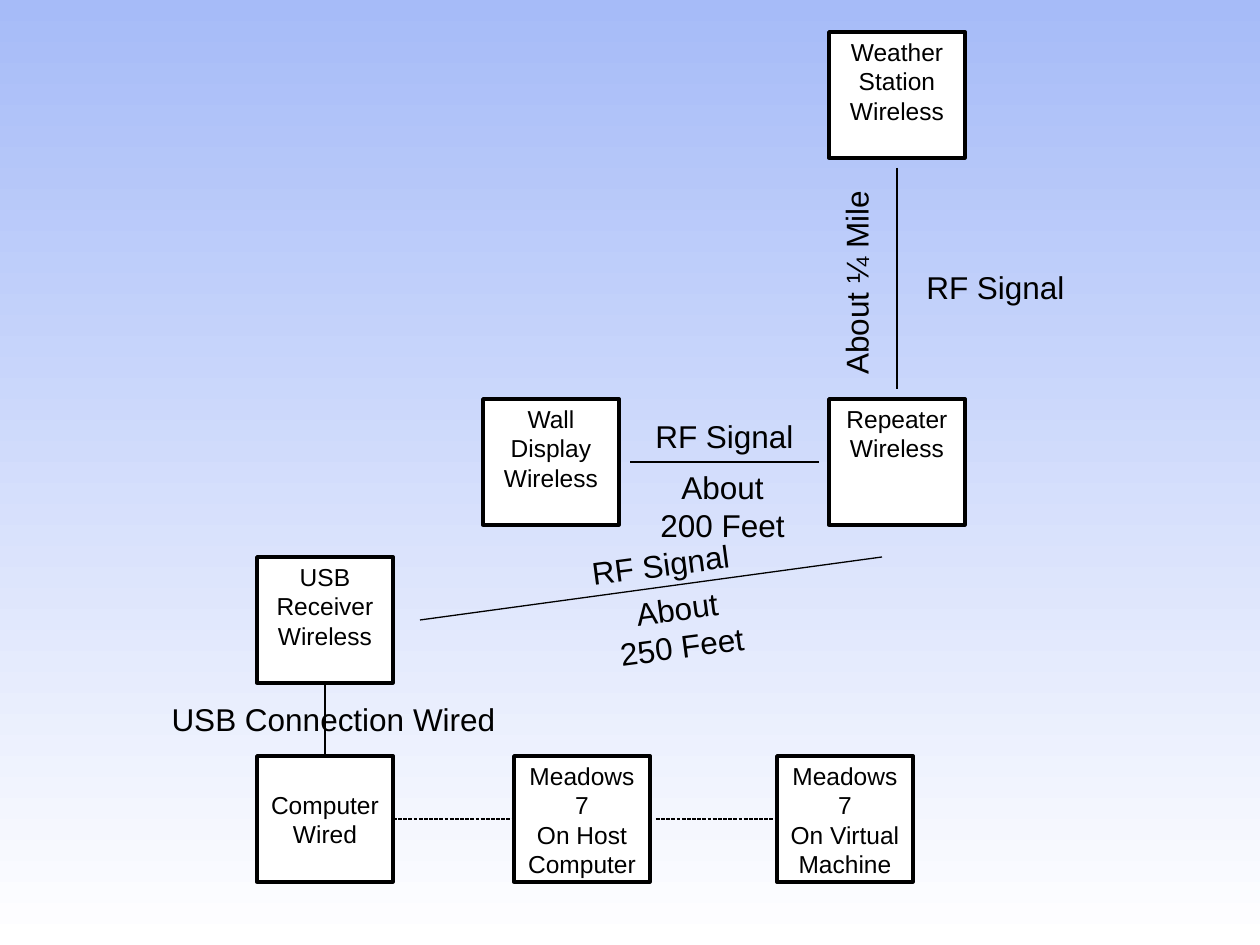
import pptx
import pptx.dml.color
import pptx.enum.dml
import pptx.enum.shapes
import pptx.enum.text
import pptx.util
from dataclasses import dataclass
from lxml import etree

PX = 914400 / 126


@dataclass(frozen=True)
class Theme:
    sky = pptx.dml.color.RGBColor.from_string("A6BBF8")
    white = pptx.dml.color.RGBColor.from_string("FFFFFF")
    ink = pptx.dml.color.RGBColor.from_string("000000")
    font = "Arial"
    box_size = pptx.util.Pt(14)
    label_size = pptx.util.Pt(18)
    box_line = pptx.util.Pt(2)
    link_line = pptx.util.Pt(0.75)


theme = Theme()


def px(*lengths):
    """Turn pixel lengths into EMU."""
    return [pptx.util.Emu(round(length * PX)) for length in lengths]


def write_lines(text_frame, text, size):
    text_frame.text = text
    for paragraph in text_frame.paragraphs:
        paragraph.alignment = pptx.enum.text.PP_ALIGN.CENTER
        paragraph.font.name = theme.font
        paragraph.font.size = size
        paragraph.font.color.rgb = theme.ink


presentation = pptx.Presentation()
presentation.slide_width, presentation.slide_height = px(1260, 945)
slide = presentation.slides.add_slide(presentation.slide_layouts[6])

background = slide.background.fill
background.gradient()
background.gradient_angle = 270
for stop, color in zip(background.gradient_stops, (theme.sky, theme.white)):
    stop.color.rgb = color

# Devices: left, top, text, anchor
TOP = pptx.enum.text.MSO_ANCHOR.TOP
MIDDLE = pptx.enum.text.MSO_ANCHOR.MIDDLE
BOX_WIDTH, BOX_HEIGHT = 136, 126
devices = [
    (829, 32, "Weather\nStation\nWireless", TOP),
    (829, 399, "Repeater\nWireless", TOP),
    (483, 399, "Wall Display\nWireless", TOP),
    (257, 557, "USB Receiver Wireless", TOP),
    (257, 756, "Computer\nWired", MIDDLE),
    (514, 756, "Meadows 7\nOn Host\nComputer", TOP),
    (777, 756, "Meadows 7\nOn Virtual Machine", TOP),
]
for left, top, text, anchor in devices:
    box = slide.shapes.add_shape(
        pptx.enum.shapes.MSO_SHAPE.RECTANGLE, *px(left, top, BOX_WIDTH, BOX_HEIGHT))
    box.shadow.inherit = False
    box.fill.solid()
    box.fill.fore_color.rgb = theme.white
    box.line.color.rgb = theme.ink
    box.line.width = theme.box_line
    frame = box.text_frame
    frame.word_wrap = True
    frame.vertical_anchor = anchor
    frame.margin_left, frame.margin_right = px(10, 10)
    frame.margin_top, frame.margin_bottom = px(5, 5)
    write_lines(frame, text, theme.box_size)

# Labels: left, top, width, height, rotation, text
labels = [
    (913, 262, 165, 50, 0, "RF Signal"),
    (751, 258, 210, 50, 270, "About ¼ Mile"),
    (642, 411, 165, 50, 0, "RF Signal"),
    (647, 462, 151, 89, 0, "About\n200 Feet"),
    (578, 539, 165, 50, 352.5, "RF Signal"),
    (604, 583, 151, 89, 352.5, "About\n250 Feet"),
    (157, 694, 353, 50, 0, "USB Connection Wired"),
]
for left, top, width, height, rotation, text in labels:
    label = slide.shapes.add_textbox(*px(left, top, width, height))
    label.rotation = rotation
    label.text_frame.word_wrap = False
    label.text_frame.auto_size = pptx.enum.text.MSO_AUTO_SIZE.SHAPE_TO_FIT_TEXT
    write_lines(label.text_frame, text, theme.label_size)

# Links: start x, start y, end x, end y, dashed
links = [
    (897, 168, 897, 389, False),
    (630, 462, 819, 462, False),
    (882, 557, 420, 620, False),
    (325, 683, 325, 756, False),
    (393, 819, 514, 819, True),
    (656, 819, 777, 819, True),
]
for *ends, dashed in links:
    link = slide.shapes.add_connector(
        pptx.enum.shapes.MSO_CONNECTOR.STRAIGHT, *px(*ends))
    link.line.color.rgb = theme.ink
    link.line.width = theme.link_line
    if dashed:
        link.line.dash_style = pptx.enum.dml.MSO_LINE.SQUARE_DOT
    properties = link._element.spPr
    etree.SubElement(properties, pptx.oxml.ns.qn("a:effectLst"))

presentation.save("out.pptx")
